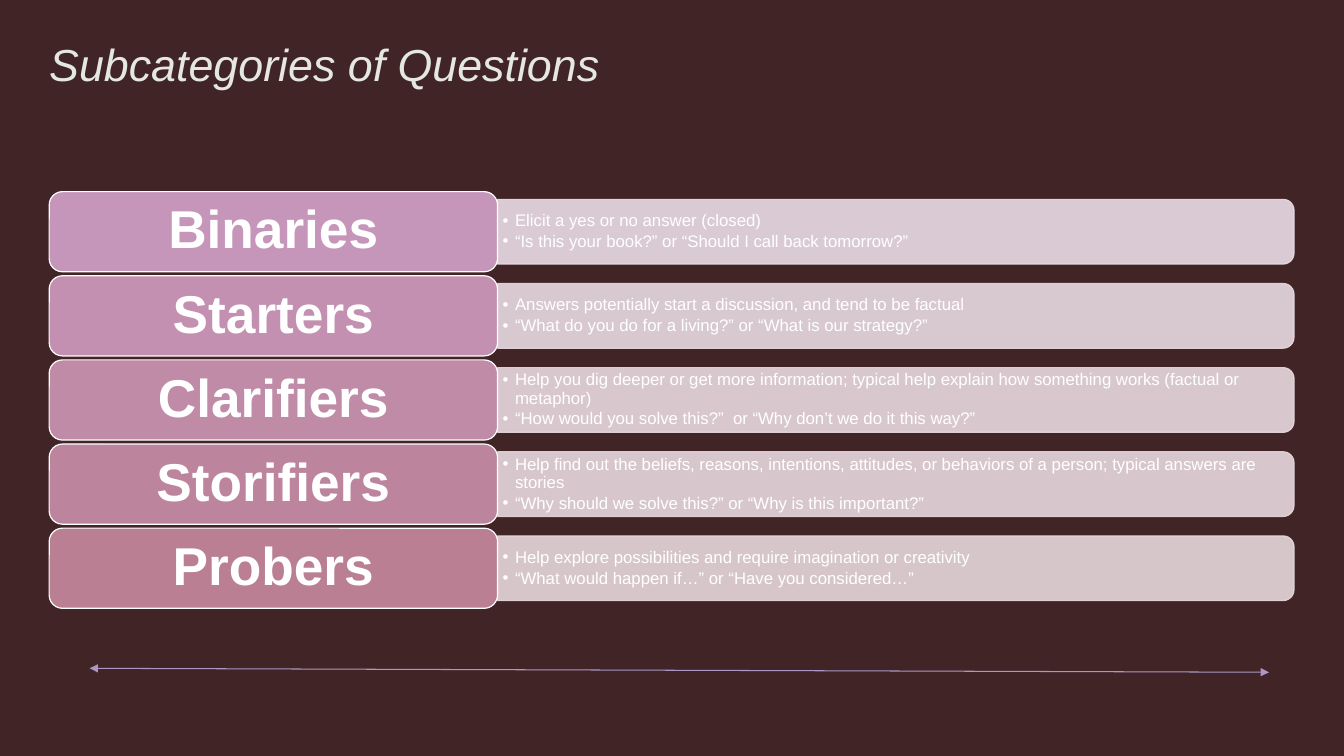
from lxml import etree
from pptx import Presentation
from pptx.dml.color import RGBColor
from pptx.enum.shapes import MSO_CONNECTOR, MSO_SHAPE
from pptx.enum.text import MSO_ANCHOR, PP_ALIGN
from pptx.oxml.ns import qn
from pptx.util import Cm, Pt

ROUND = MSO_SHAPE.ROUNDED_RECTANGLE
CAP = MSO_SHAPE.ROUND_2_SAME_RECTANGLE
LINE = MSO_CONNECTOR.STRAIGHT
MIDDLE = MSO_ANCHOR.MIDDLE
CENTER = PP_ALIGN.CENTER
LEFT = PP_ALIGN.LEFT

TITLE = "Subcategories of Questions"
ROWS = [
    ("Binaries", "C696BA", "EADDE7", [
        "Elicit a yes or no answer (closed)",
        "“Is this your book?” or “Should I call back tomorrow?”"]),
    ("Starters", "C390B1", "E9DCE4", [
        "Answers potentially start a discussion, and tend to be factual",
        "“What do you do for a living?” or “What is our strategy?”"]),
    ("Clarifiers", "C08BA7", "E9DAE1", [
        "Help you dig deeper or get more information; typical help explain how something works (factual or metaphor)",
        "“How would you solve this?”  or “Why don’t we do it this way?”"]),
    ("Storifiers", "BD859D", "E8D9DF", [
        "Help find out the beliefs, reasons, intentions, attitudes, or behaviors of a person; typical answers are stories",
        "“Why should we solve this?” or “Why is this important?”"]),
    ("Probers", "BA7F92", "E7D8DC", [
        "Help explore possibilities and require imagination or creativity",
        "“What would happen if…” or “Have you considered…”"]),
]
BACK, CREAM, WHITE, LILAC = "412425", "E5E8E2", "FFFFFF", "AB96C6"

EDGE, TOP, PITCH = 1.24, 4.83, 2.12
TAG_W, TAG_H = 11.3, 2.02
BAR_W, BAR_H = 20.07, 1.63
NOTE_W, NOTE_H = 19.99, 1.45

deck = Presentation()
deck.slide_width, deck.slide_height = Cm(33.87), Cm(19.05)
slide = deck.slides.add_slide(deck.slide_layouts[6])


def tint(fill, color):
    fill.solid()
    fill.fore_color.rgb = RGBColor.from_string(color)


def add_box(kind, x, y, w, h, color, edge):
    box = slide.shapes.add_shape(kind, Cm(x), Cm(y), Cm(w), Cm(h))
    box.shadow.inherit = False
    tint(box.fill, color)
    tint(box.line.fill, edge)
    box.line.width = Pt(0.85)
    return box


def fade(box, share):
    for node in box._element.spPr.iter(qn("a:srgbClr")):
        etree.SubElement(node, qn("a:alpha"), val=str(share * 1000))


def add_area(x, y, w, h):
    return slide.shapes.add_textbox(Cm(x), Cm(y), Cm(w), Cm(h))


def set_frame(box, side, rim):
    frame = box.text_frame
    frame.word_wrap = True
    frame.margin_left = frame.margin_right = Cm(side)
    frame.margin_top = frame.margin_bottom = Cm(rim)
    return frame


def write(para, text, size, color, align=LEFT, bold=False, slant=False):
    para.alignment = align
    para.line_spacing = 0.9
    run = para.add_run()
    run.text = text
    font = run.font
    font.name, font.size = "Arial", Pt(size)
    font.bold, font.italic = bold, slant
    font.color.rgb = RGBColor.from_string(color)


def add_bullet(para):
    para.space_after = Pt(2)
    props = para._p.get_or_add_pPr()
    props.set("marL", str(Cm(0.31)))
    props.set("indent", str(Cm(-0.31)))
    etree.SubElement(props, qn("a:buFont"), typeface="Arial")
    etree.SubElement(props, qn("a:buChar"), char="•")


tint(slide.background.fill, BACK)
head = set_frame(add_area(EDGE, 1.09, 31.39, 3.18), 0, 0)
write(head.paragraphs[0], TITLE, 32, CREAM, slant=True)

seam = EDGE + TAG_W
for i, (name, color, pale, notes) in enumerate(ROWS):
    top = TOP + i * PITCH
    mid = top + TAG_H / 2

    bar = add_box(CAP, seam + (BAR_W - BAR_H) / 2, mid - BAR_W / 2,
                  BAR_H, BAR_W, pale, pale)
    bar.rotation = 90
    fade(bar, 90)

    frame = set_frame(add_area(seam, mid - NOTE_H / 2, NOTE_W, NOTE_H), 0.13, 0.08)
    frame.vertical_anchor = MIDDLE
    for j, note in enumerate(notes):
        para = frame.add_paragraph() if j else frame.paragraphs[0]
        write(para, note, 12, WHITE)
        add_bullet(para)

    tag = add_box(ROUND, EDGE, top, TAG_W, TAG_H, color, WHITE)
    frame = set_frame(tag, 0.5, 0.2)
    frame.vertical_anchor = MIDDLE
    write(frame.paragraphs[0], name, 38, WHITE, CENTER, bold=True)

arrow = slide.shapes.add_connector(LINE, Cm(2.26), Cm(16.84), Cm(31.98), Cm(16.94))
tint(arrow.line.fill, LILAC)
arrow.line.width = Pt(0.75)
stroke = arrow.line._get_or_add_ln()
for end in ("a:headEnd", "a:tailEnd"):
    etree.SubElement(stroke, qn(end), type="triangle")
etree.SubElement(arrow._element.spPr, qn("a:effectLst"))

deck.save("out.pptx")
